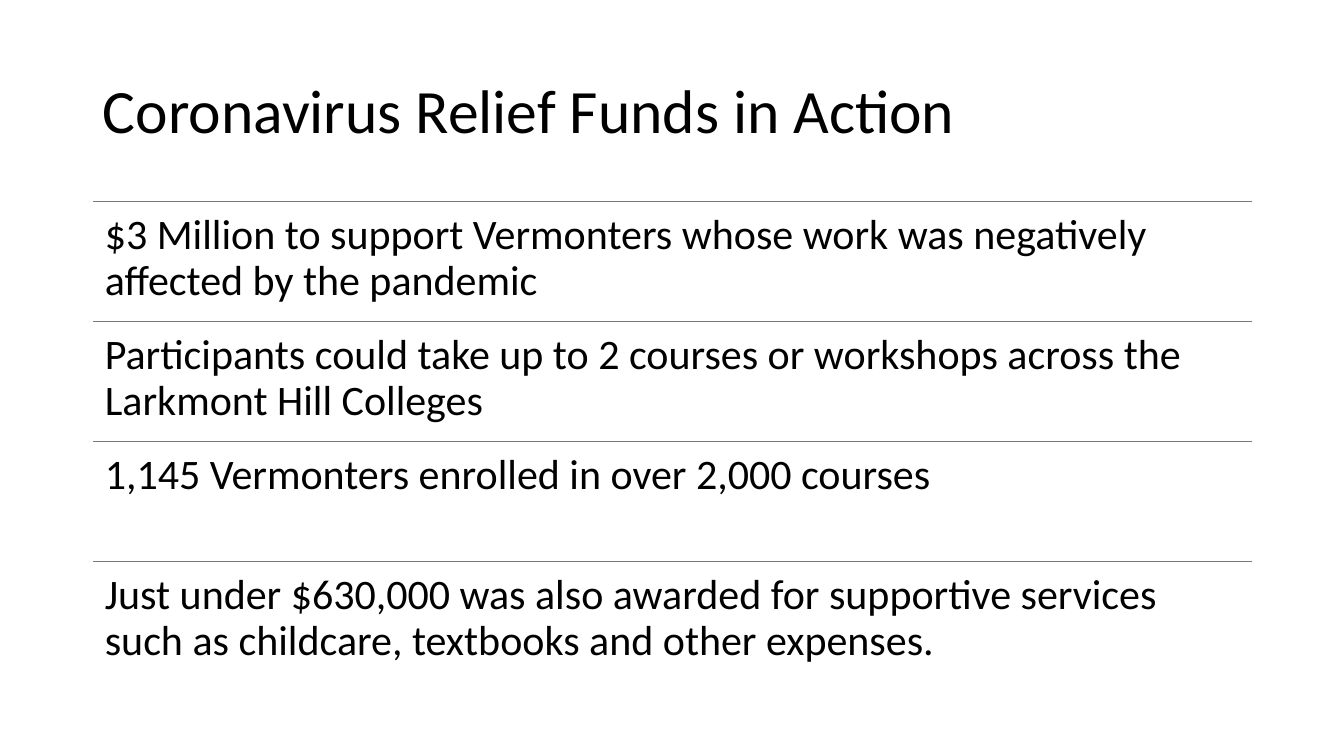
from dataclasses import dataclass

from lxml import etree
from pptx import Presentation
from pptx.dml.color import RGBColor
from pptx.enum.shapes import MSO_CONNECTOR
from pptx.enum.text import MSO_ANCHOR, MSO_AUTO_SIZE, PP_ALIGN
from pptx.oxml.ns import qn
from pptx.slide import Slide
from pptx.text.text import TextFrame
from pptx.util import Inches, Pt

STRAIGHT = MSO_CONNECTOR.STRAIGHT
TOP, MIDDLE = MSO_ANCHOR.TOP, MSO_ANCHOR.MIDDLE
LEFT = PP_ALIGN.LEFT
NO_AUTOFIT = MSO_AUTO_SIZE.NONE

COLORS = {"text": "000000", "rule": "4D86A0"}
FONT = "Calibri"

SLIDE_WIDTH, SLIDE_HEIGHT = Inches(13.33), Inches(7.5)
COLUMN_LEFT, COLUMN_WIDTH = Inches(0.92), Inches(11.5)
TITLE_TOP, TITLE_HEIGHT = Inches(0.4), Inches(1.45)
ROWS_TOP, ROW_HEIGHT = Inches(2), Inches(1.19)


@dataclass(frozen=True)
class Fact:
    row: int
    text: str

    @property
    def top(self) -> int:
        return ROWS_TOP + self.row * ROW_HEIGHT


FACT_TEXTS = (
    "$3 Million to support Vermonters whose work was negatively affected by the pandemic",
    "Participants could take up to 2 courses or workshops across the Larkmont Hill Colleges",
    "1,145 Vermonters enrolled in over 2,000 courses",
    "Just under $630,000 was also awarded for supportive services such as childcare, "
    "textbooks and other expenses.",
)
FACTS = [Fact(row, text) for row, text in enumerate(FACT_TEXTS)]


def write_text(frame: TextFrame, text: str, *, size: float, anchor: MSO_ANCHOR,
               inset_x: float, inset_y: float, space_after: float = 0) -> None:
    frame.word_wrap = True
    frame.auto_size = NO_AUTOFIT
    frame.vertical_anchor = anchor
    frame.margin_left = frame.margin_right = Inches(inset_x)
    frame.margin_top = frame.margin_bottom = Inches(inset_y)
    paragraph = frame.paragraphs[0]
    paragraph.alignment = LEFT
    paragraph.line_spacing = 0.9
    paragraph.space_after = Pt(space_after)
    run = paragraph.add_run()
    run.text = text
    run.font.name = FONT
    run.font.size = Pt(size)
    run.font.color.rgb = RGBColor.from_string(COLORS["text"])


def add_title(slide: Slide, text: str) -> None:
    title = slide.shapes.title
    title.left, title.top = COLUMN_LEFT, TITLE_TOP
    title.width, title.height = COLUMN_WIDTH, TITLE_HEIGHT
    write_text(title.text_frame, text, size=44, anchor=MIDDLE, inset_x=0.1, inset_y=0.05)


def add_rule(slide: Slide, top: int) -> None:
    rule = slide.shapes.add_connector(
        STRAIGHT, COLUMN_LEFT, top, COLUMN_LEFT + COLUMN_WIDTH, top)
    rule.line.color.rgb = RGBColor.from_string(COLORS["rule"])
    rule.line.width = Pt(1)
    etree.SubElement(rule.element.spPr, qn("a:effectLst"))


def add_fact(slide: Slide, fact: Fact) -> None:
    """Draw a rule with the fact's text below it."""
    add_rule(slide, fact.top)
    box = slide.shapes.add_textbox(COLUMN_LEFT, fact.top, COLUMN_WIDTH, ROW_HEIGHT)
    write_text(box.text_frame, fact.text, size=30, anchor=TOP,
               inset_x=0.12, inset_y=0.12, space_after=10.5)


def main() -> None:
    presentation = Presentation()
    presentation.slide_width, presentation.slide_height = SLIDE_WIDTH, SLIDE_HEIGHT
    title_only = presentation.slide_layouts.get_by_name("Title Only")
    slide = presentation.slides.add_slide(title_only)
    add_title(slide, "Coronavirus Relief Funds in Action")
    for fact in FACTS:
        add_fact(slide, fact)
    presentation.save("out.pptx")


if __name__ == "__main__":
    main()
